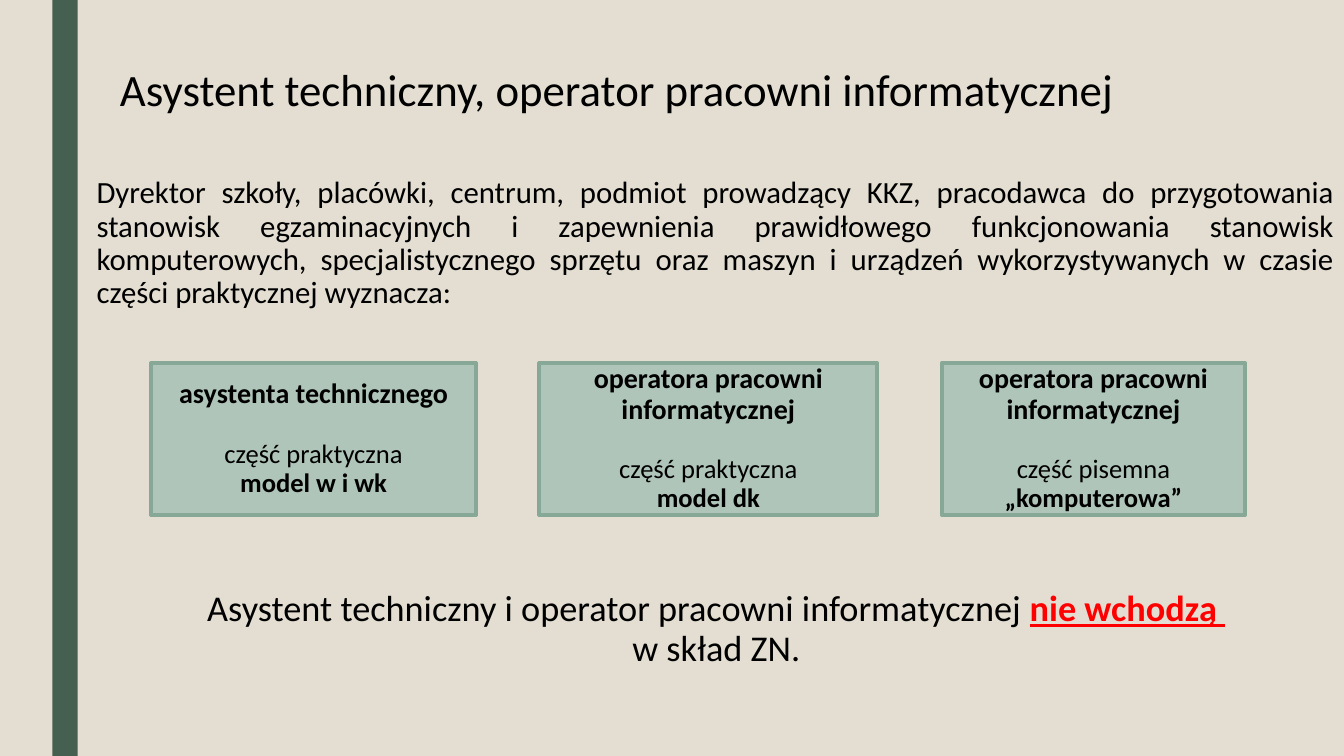
from pptx import Presentation
from pptx.dml.color import RGBColor as RGB
from pptx.enum.shapes import MSO_SHAPE as SHAPE
from pptx.enum.text import MSO_ANCHOR as ANCHOR, MSO_AUTO_SIZE as FIT, PP_ALIGN as ALIGN
from pptx.util import Inches, Pt

THEME = {
    "font": "Calibri",
    "back": RGB.from_string("E3DED1"),
    "bar": RGB.from_string("455F51"),
    "box": RGB.from_string("AFC5B9"),
    "edge": RGB.from_string("87A896"),
    "text": RGB.from_string("000000"),
    "alert": RGB.from_string("FF0000"),
    "title": 32, "body": 22, "role": 20, "part": 19, "note": 25.9,
}


def style(p, size, align, bold=False, spacing=0.9):
    p.alignment, p.line_spacing = align, spacing
    p.space_before = p.space_after = Pt(0)
    p.font.name, p.font.size = THEME["font"], Pt(size)
    p.font.bold, p.font.color.rgb = bold, THEME["text"]


def add_rect(left, top, width, height, fill):
    sp = s.shapes.add_shape(SHAPE.RECTANGLE, Inches(left), Inches(top),
                            Inches(width), Inches(height))
    sp.shadow.inherit = False
    sp.fill.solid()
    sp.fill.fore_color.rgb = fill
    sp.line.fill.background()
    return sp


prs = Presentation()
prs.slide_width, prs.slide_height = Inches(13.33), Inches(7.5)
s = prs.slides.add_slide(prs.slide_layouts[5])
s.background.fill.solid()
s.background.fill.fore_color.rgb = THEME["back"]

# Side bar
add_rect(0.52, 0, 0.25, 7.5, THEME["bar"])

# Title
title = s.shapes.title
title.left, title.top = Inches(1.19), Inches(0.52)
title.width, title.height = Inches(11.84), Inches(0.68)
tf = title.text_frame
tf.text = "Asystent techniczny, operator pracowni informatycznej"
tf.auto_size, tf.vertical_anchor = FIT.NONE, ANCHOR.MIDDLE
tf.margin_left = tf.margin_right = tf.margin_top = tf.margin_bottom = 0
style(tf.paragraphs[0], THEME["title"], ALIGN.LEFT, spacing=1.08)

# Introduction
intro = s.shapes.add_textbox(Inches(0.86), Inches(1.71), Inches(12.47), Inches(1.27))
tf = intro.text_frame
tf.word_wrap = True
tf.text = ("Dyrektor szkoły, placówki, centrum, podmiot prowadzący KKZ, pracodawca "
           "do przygotowania stanowisk egzaminacyjnych i zapewnienia prawidłowego "
           "funkcjonowania stanowisk komputerowych, specjalistycznego sprzętu oraz "
           "maszyn i urządzeń wykorzystywanych w czasie części praktycznej wyznacza:")
style(tf.paragraphs[0], THEME["body"], ALIGN.JUSTIFY)

# Role boxes: left, width, role, exam part, model
roles = [
    (1.5, 3.22, "asystenta technicznego", "część praktyczna", "model w i wk"),
    (5.35, 3.35, "operatora pracowni informatycznej", "część praktyczna", "model dk"),
    (9.34, 3.01, "operatora pracowni informatycznej", "część pisemna", "„komputerowa”"),
]
for left, width, role, part, model in roles:
    sp = add_rect(left, 3.6, width, 1.51, THEME["box"])
    sp.line.color.rgb, sp.line.width = THEME["edge"], Pt(2.75)
    tf = sp.text_frame
    tf.word_wrap, tf.vertical_anchor = True, ANCHOR.MIDDLE
    tf.margin_left = tf.margin_right = tf.margin_top = tf.margin_bottom = Inches(0.01)
    tf.text = "\n".join((role, part, model))
    role_p, part_p, model_p = tf.paragraphs
    style(role_p, THEME["role"], ALIGN.CENTER, bold=True)
    style(part_p, THEME["part"], ALIGN.CENTER)
    style(model_p, THEME["part"], ALIGN.CENTER, bold=True)
    part_p.space_before = Pt(22)

# Closing note
note = s.shapes.add_textbox(Inches(1.86), Inches(5.81), Inches(10.49), Inches(0.91))
tf = note.text_frame
tf.word_wrap = True
p = tf.paragraphs[0]
style(p, THEME["note"], ALIGN.CENTER)
p.add_run().text = "Asystent techniczny i operator pracowni informatycznej "
r = p.add_run()
r.text = "nie wchodzą "
r.font.bold = r.font.underline = True
r.font.color.rgb = THEME["alert"]
p.add_line_break()
p.add_run().text = "w skład ZN."

prs.save("out.pptx")
